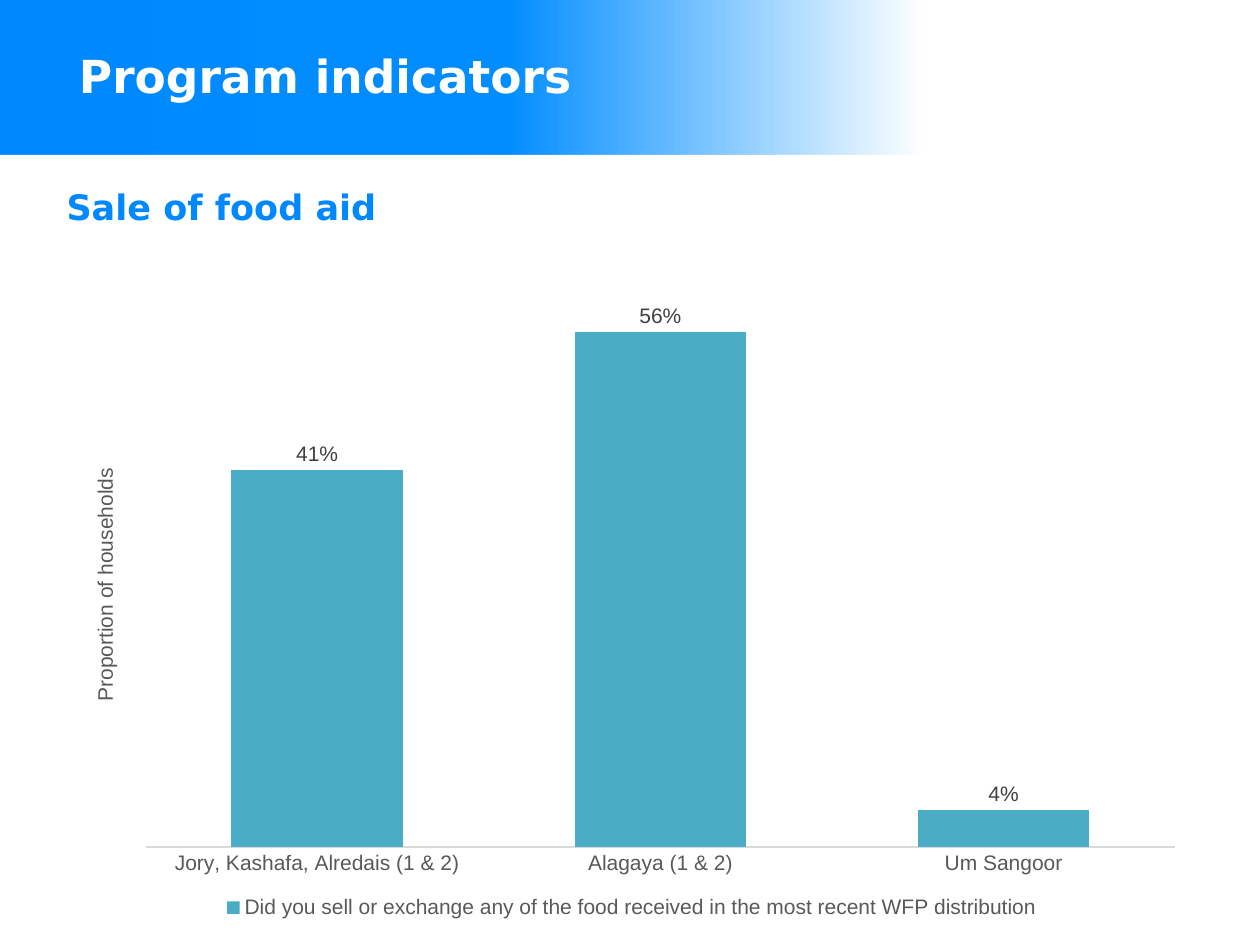
"""Build the program indicators slide with a column chart on the sale of food aid."""
from dataclasses import dataclass
from typing import Any

from lxml.etree import SubElement
from pptx import Presentation
from pptx.chart.chart import Chart
from pptx.chart.data import CategoryChartData
from pptx.dml.color import RGBColor
from pptx.enum.chart import XL_CHART_TYPE, XL_LABEL_POSITION, XL_LEGEND_POSITION, XL_TICK_LABEL_POSITION, XL_TICK_MARK
from pptx.enum.shapes import MSO_SHAPE
from pptx.enum.text import MSO_ANCHOR
from pptx.oxml import parse_xml
from pptx.oxml.ns import nsdecls, qn
from pptx.slide import Slide
from pptx.util import Pt

BLUE = RGBColor(0x00, 0x88, 0xFF)
WHITE = RGBColor(0xFF, 0xFF, 0xFF)
TEAL = RGBColor(0x4B, 0xAC, 0xC6)
BLACK = RGBColor(0x00, 0x00, 0x00)
LABEL_GREY = RGBColor(0x40, 0x40, 0x40)
TEXT_GREY = RGBColor(0x59, 0x59, 0x59)
LINE_GREY = RGBColor(0xD9, 0xD9, 0xD9)

BANNER_STOPS = ((0, "0088FF", 100), (40, "008DFF", 100), (73, "0091FF", 0))
PLOT_LAYOUT = {"x": 0.07, "y": 0.02, "w": 0.91, "h": 0.86}
SALES = {"Jory, Kashafa, Alredais (1 & 2)": 0.41, "Alagaya (1 & 2)": 0.56, "Um Sangoor": 0.04}
QUESTION = "Did you sell or exchange any of the food received in the most recent WFP distribution"


@dataclass(frozen=True)
class Heading:
    text: str
    bounds: tuple[float, float, float, float]
    margins: tuple[float, float, float, float]
    anchor: MSO_ANCHOR
    size: float
    color: RGBColor


HEADINGS = (
    Heading("Sale of food aid", (38, 106, 646.5, 33), (0, 0, 0, 0), MSO_ANCHOR.TOP, 20, BLUE),
    Heading("Program indicators", (38, 9.5, 466.5, 72.5), (7.2, 0, 7.2, 5), MSO_ANCHOR.MIDDLE, 26, WHITE),
)


def apply_format(target: Any, values: dict[str, Any]) -> None:
    for name, value in values.items():
        setattr(target, name, value)


def format_font(font: Any, size: float, color: RGBColor, name: str = "Arial", bold: bool = False) -> None:
    apply_format(font, {"name": name, "size": Pt(size), "bold": bold})
    font.color.rgb = color


def draw_banner(page: Slide) -> None:
    banner = page.shapes.add_shape(MSO_SHAPE.RECTANGLE, Pt(0), Pt(0), Pt(720), Pt(88.5))
    banner.shadow.inherit = False
    banner.line.fill.background()
    stops = "".join(
        f'<a:gs pos="{position * 1000}"><a:srgbClr val="{color}"><a:alpha val="{opacity * 1000}"/></a:srgbClr></a:gs>'
        for position, color, opacity in BANNER_STOPS
    )
    banner.fill.gradient()
    banner.fill.gradient_angle = 0
    old_stops = banner.fill._xPr.find(qn("a:gradFill")).find(qn("a:gsLst"))
    old_stops.getparent().replace(old_stops, parse_xml(f"<a:gsLst {nsdecls('a')}>{stops}</a:gsLst>"))


def draw_heading(page: Slide, heading: Heading) -> None:
    box = page.shapes.add_textbox(*map(Pt, heading.bounds))
    sides = ("margin_left", "margin_top", "margin_right", "margin_bottom")
    margins = dict(zip(sides, map(Pt, heading.margins)))
    apply_format(box.text_frame, {"word_wrap": True, "vertical_anchor": heading.anchor, **margins})
    span = box.text_frame.paragraphs[0].add_run()
    span.text = heading.text
    format_font(span.font, heading.size, heading.color, "DejaVu Sans", True)


def place_plot(chart: Chart) -> None:
    plot_area = chart._chartSpace.chart.plotArea
    layout = plot_area.find(qn("c:layout"))
    if layout is None:
        layout = parse_xml(f"<c:layout {nsdecls('c')}/>")
        plot_area.insert(0, layout)
    manual = SubElement(layout, qn("c:manualLayout"))
    settings = {"layoutTarget": "inner", "xMode": "edge", "yMode": "edge", **PLOT_LAYOUT}
    for name, value in settings.items():
        SubElement(manual, qn(f"c:{name}")).set("val", str(value))


def draw_chart(page: Slide) -> None:
    sales = CategoryChartData(number_format="0%")
    sales.categories = SALES.keys()
    sales.add_series(QUESTION, SALES.values())
    bounds = map(Pt, (38, 161.5, 646.5, 366.5))
    chart = page.shapes.add_chart(XL_CHART_TYPE.COLUMN_CLUSTERED, *bounds, sales).chart
    apply_format(chart, {"has_title": False, "has_legend": True})
    format_font(chart.font, 12, BLACK)
    apply_format(chart.legend, {"position": XL_LEGEND_POSITION.BOTTOM, "include_in_layout": False})
    format_font(chart.legend.font, 12, TEXT_GREY)

    plot = chart.plots[0]
    apply_format(plot, {"gap_width": 100, "overlap": -27, "vary_by_categories": False, "has_data_labels": True})
    apply_format(plot.data_labels, {
        "show_value": True, "position": XL_LABEL_POSITION.OUTSIDE_END,
        "number_format": "0%", "number_format_is_linked": False,
    })
    format_font(plot.data_labels.font, 12, LABEL_GREY)
    columns = plot.series[0].format
    columns.fill.solid()
    columns.fill.fore_color.rgb = TEAL

    categories = chart.category_axis
    apply_format(categories, {
        "major_tick_mark": XL_TICK_MARK.NONE, "minor_tick_mark": XL_TICK_MARK.NONE,
        "tick_label_position": XL_TICK_LABEL_POSITION.NEXT_TO_AXIS, "has_major_gridlines": False,
    })
    format_font(categories.tick_labels.font, 12, TEXT_GREY)
    categories.format.line.width = Pt(0.75)
    categories.format.line.color.rgb = LINE_GREY

    values = chart.value_axis
    apply_format(values, {
        "visible": False, "has_major_gridlines": False, "has_title": True,
        "minimum_scale": 0, "maximum_scale": 0.6,
    })
    apply_format(values.tick_labels, {"number_format": "0%", "number_format_is_linked": False})
    para = values.axis_title.text_frame.paragraphs[0]
    span = para.add_run()
    span.text = "Proportion of households"
    format_font(span.font, 12, TEXT_GREY)
    place_plot(chart)


def main() -> None:
    deck = Presentation()
    apply_format(deck, {"slide_width": Pt(720), "slide_height": Pt(540)})
    page = deck.slides.add_slide(deck.slide_layouts[6])
    draw_banner(page)
    for heading in HEADINGS:
        draw_heading(page, heading)
    draw_chart(page)
    deck.save("out.pptx")


if __name__ == "__main__":
    main()
